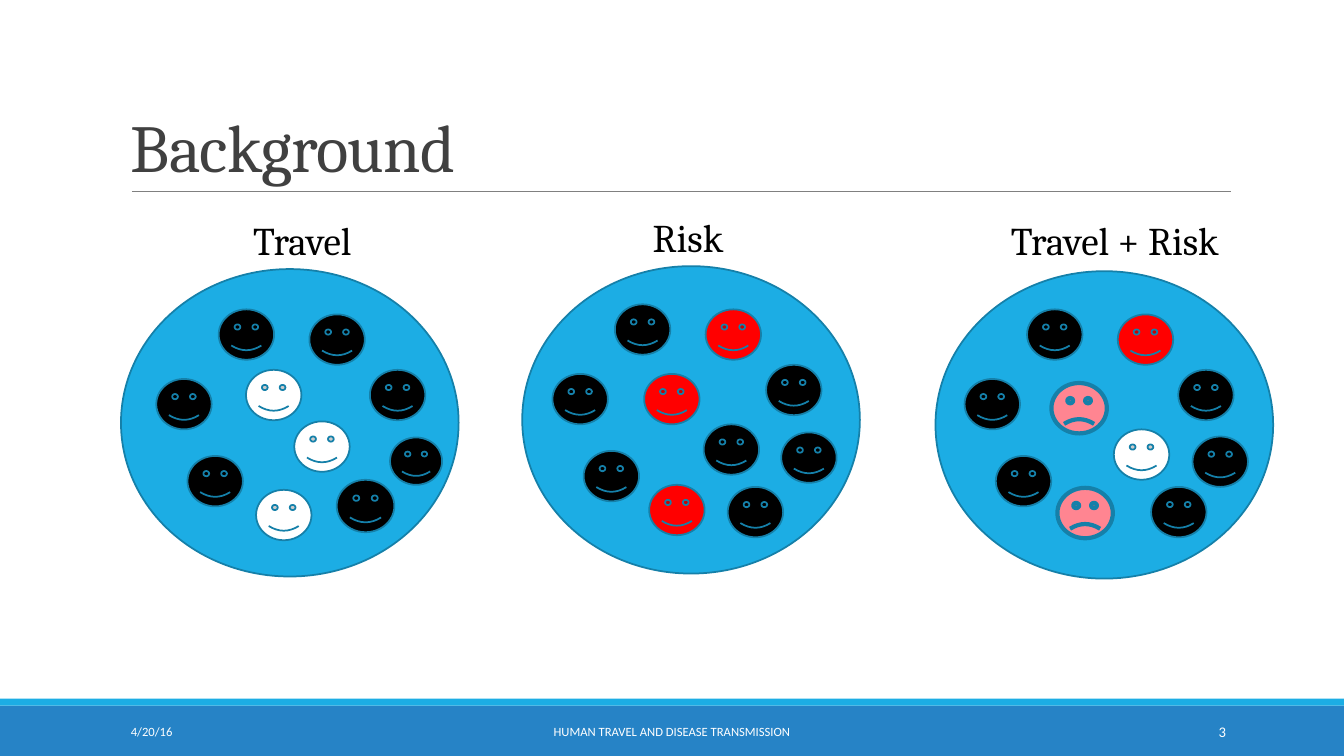
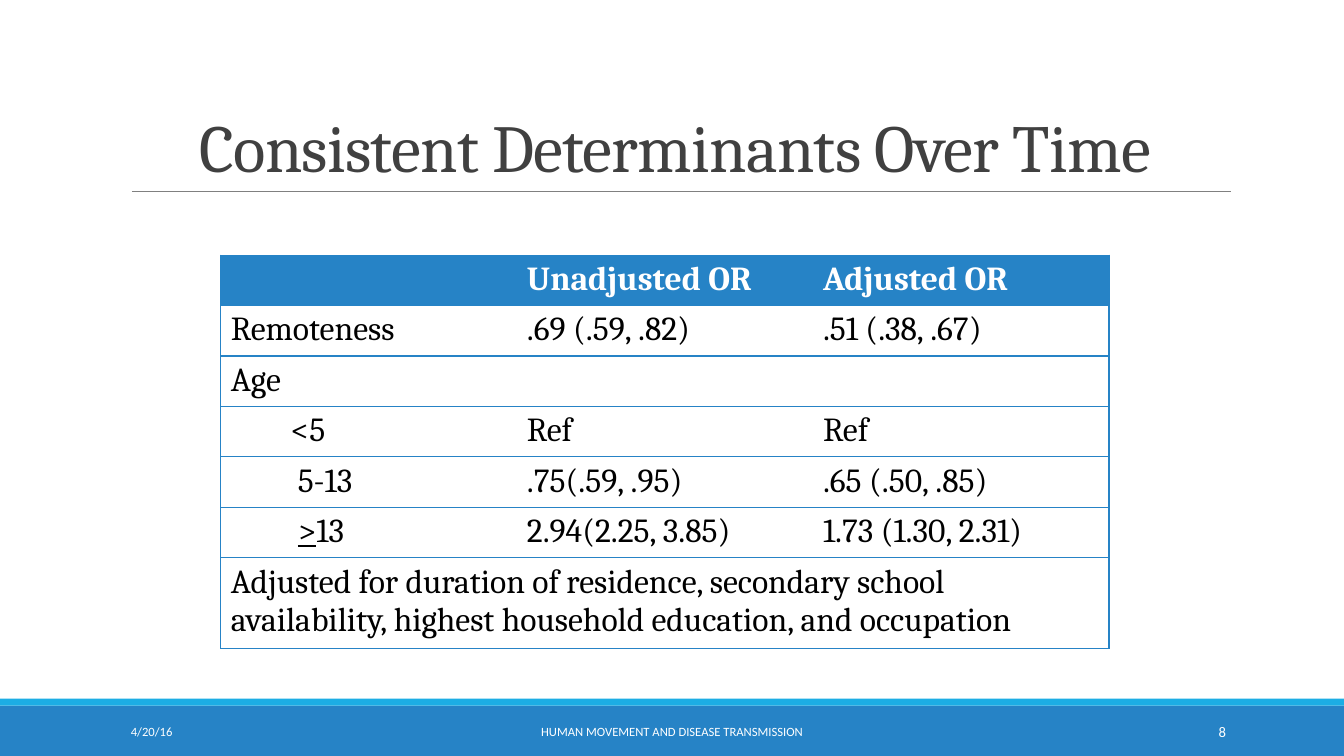
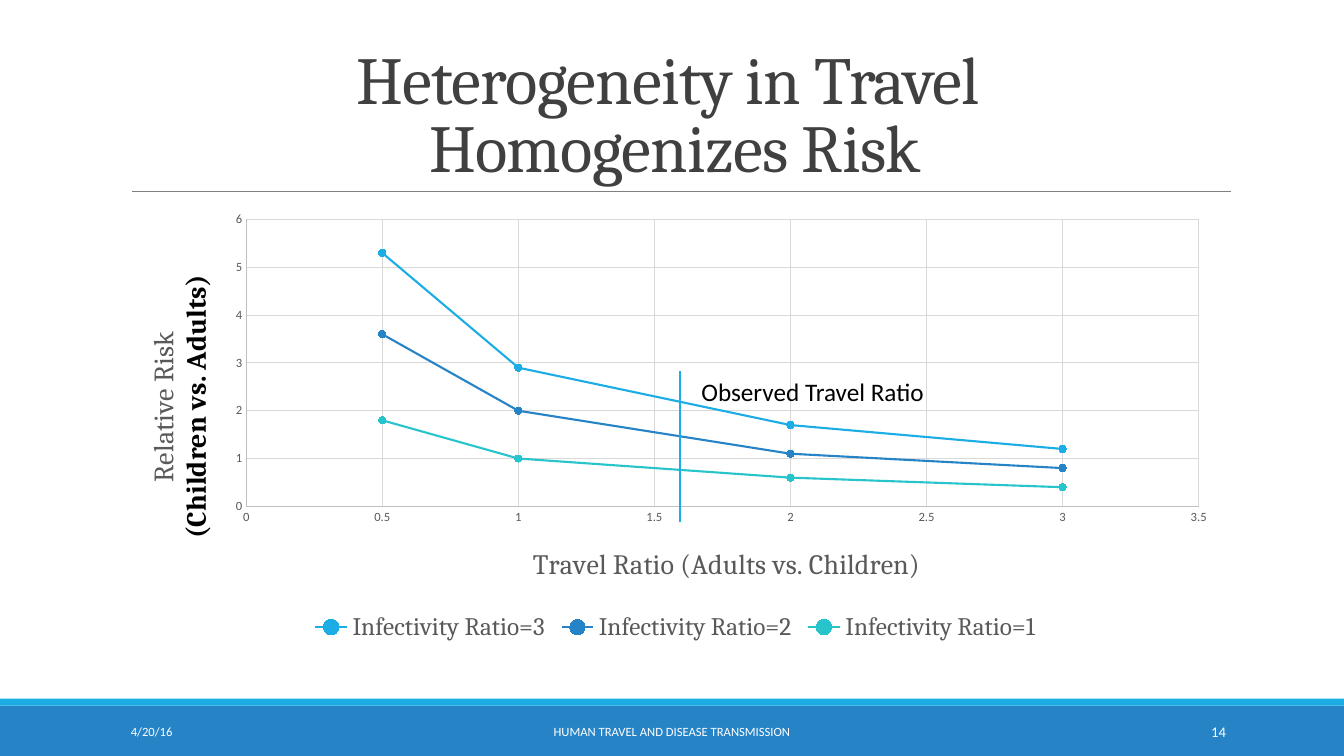
from dataclasses import dataclass

from lxml.etree import SubElement
from pptx import Presentation
from pptx.chart.data import XyChartData
from pptx.dml.color import RGBColor
from pptx.enum.chart import XL_CHART_TYPE, XL_LEGEND_POSITION, XL_MARKER_STYLE, XL_TICK_MARK
from pptx.enum.shapes import MSO_CONNECTOR, MSO_SHAPE
from pptx.enum.text import MSO_ANCHOR, PP_ALIGN
from pptx.oxml.ns import qn
from pptx.util import Pt


@dataclass(frozen=True)
class Theme:
    white: RGBColor = RGBColor(0xFF, 0xFF, 0xFF)
    black: RGBColor = RGBColor(0, 0, 0)
    red: RGBColor = RGBColor(0xFF, 0, 0)
    pink: RGBColor = RGBColor(0xFF, 0x85, 0x91)
    sky: RGBColor = RGBColor(0x1C, 0xAD, 0xE4)
    blue: RGBColor = RGBColor(0x26, 0x83, 0xC6)
    teal: RGBColor = RGBColor(0x28, 0xC4, 0xCC)
    outline: RGBColor = RGBColor(0x15, 0x80, 0xA9)
    heading: RGBColor = RGBColor(0x40, 0x40, 0x40)
    rule: RGBColor = RGBColor(0x80, 0x80, 0x80)
    chart_text: RGBColor = RGBColor(0x59, 0x59, 0x59)
    axis: RGBColor = RGBColor(0xBF, 0xBF, 0xBF)
    grid: RGBColor = RGBColor(0xD9, 0xD9, 0xD9)
    serif: str = "Cambria"
    sans: str = "Calibri"
    title_size: float = 48
    label_size: float = 28
    table_size: float = 24
    axis_title_size: float = 20
    note_size: float = 18
    number_size: float = 10.5
    small_size: float = 9


THEME = Theme()


def add_text(slide, box, text, font, size, color, align=PP_ALIGN.LEFT, anchor=MSO_ANCHOR.TOP):
    """Add a wrapped text box; box is left, top, width, height in points."""
    text_box = slide.shapes.add_textbox(*map(Pt, box))
    frame = text_box.text_frame
    frame.word_wrap = True
    frame.vertical_anchor = anchor
    frame.text = text
    paragraph = frame.paragraphs[0]
    paragraph.alignment = align
    for run in paragraph.runs:
        run.font.name, run.font.size, run.font.color.rgb = font, Pt(size), color
    return text_box


def add_filled(slide, preset, box, fill, line=None, weight=1.25):
    """Add a filled preset shape, outlined only when a line colour is given."""
    shape = slide.shapes.add_shape(preset, *map(Pt, box))
    shape.shadow.inherit = False
    shape.fill.solid()
    shape.fill.fore_color.rgb = fill
    if line is None:
        shape.line.fill.background()
    else:
        shape.line.color.rgb = line
        shape.line.width = Pt(weight)
    return shape


prs = Presentation()
prs.slide_width, prs.slide_height = Pt(960), Pt(540)

# Shared frame: bands, title, footer
travel_footer = "HUMAN TRAVEL AND DISEASE TRANSMISSION"
movement_footer = "HUMAN MOVEMENT AND DISEASE TRANSMISSION"
pages = [
    ("Background", PP_ALIGN.LEFT, travel_footer, "3"),
    ("Consistent Determinants Over Time", PP_ALIGN.CENTER, movement_footer, "8"),
    ("Heterogeneity in Travel \vHomogenizes Risk", PP_ALIGN.CENTER, travel_footer, "14"),
]
slides = []
for heading, heading_align, footer, number in pages:
    slide = prs.slides.add_slide(prs.slide_layouts[6])
    slides.append(slide)
    add_filled(slide, MSO_SHAPE.RECTANGLE, (0, 504, 960, 36), THEME.blue)
    add_filled(slide, MSO_SHAPE.RECTANGLE, (0, 499, 960, 5), THEME.sky)
    title = add_text(slide, (86.4, 22.3, 792, 114.5), heading, THEME.serif,
                     THEME.title_size, THEME.heading, heading_align, MSO_ANCHOR.BOTTOM)
    title.text_frame.paragraphs[0].line_spacing = 0.85
    for properties in title.element.iter(qn("a:rPr")):
        properties.set("spc", "-50")
    for left, width, text, size, align in [
        (86.4, 194.4, "4/20/16", THEME.small_size, PP_ALIGN.LEFT),
        (290.2, 379.4, footer, THEME.small_size, PP_ALIGN.CENTER),
        (779.8, 103, number, THEME.number_size, PP_ALIGN.RIGHT),
    ]:
        add_text(slide, (left, 508.3, width, 28.8), text, THEME.sans, size,
                 THEME.white, align, MSO_ANCHOR.MIDDLE)
background, determinants, heterogeneity = slides

# Background: three crowds sharing a ring of five faces
FACE_WIDTH, FACE_HEIGHT = 39.6, 36
ring = [(0, 0), (44.6, -49.7), (109.4, -46.1), (152.6, -6.5), (22.3, 55)]
at_risk_in_ring = 2
crowds = [
    ("Travel", (96.5, 151.2, 239, 41), (86.4, 192.2), (111.6, 270.7), THEME.black, [
        (175.7, 264.2, THEME.white, 1), (210.2, 301, THEME.white, 1),
        (182.9, 349.9, THEME.white, 1), (278.6, 312.5, THEME.black, 0.94),
        (240.5, 342.7, THEME.black, 1.04)]),
    ("Risk", (381.6, 149, 219.6, 41), (373, 190.1), (394.6, 267.1), THEME.red, [
        (460.1, 267.1, THEME.red, 1), (502.6, 303.1, THEME.black, 1),
        (463.7, 346.3, THEME.red, 1), (558, 308.9, THEME.black, 1),
        (519.8, 347.8, THEME.black, 1)]),
    ("Travel + Risk", (709.2, 151.2, 174.2, 41), (668.2, 193.7), (689, 270.7), THEME.red, [
        (751, 273.6, THEME.pink, 1), (795.6, 306.7, THEME.white, 1),
        (755.3, 348.5, THEME.pink, 1), (851.8, 311.8, THEME.black, 1),
        (822.2, 347.8, THEME.black, 1)]),
]
for label, label_box, disc, (ring_left, ring_top), risk_color, others in crowds:
    add_filled(background, MSO_SHAPE.OVAL, (*disc, 241.2, 219.6), THEME.sky, THEME.outline)
    faces = [
        (ring_left + dx, ring_top + dy, risk_color if i == at_risk_in_ring else THEME.black, 1)
        for i, (dx, dy) in enumerate(ring)
    ]
    for left, top, color, scale in faces + others:
        frowning = color == THEME.pink
        face = add_filled(background, MSO_SHAPE.SMILEY_FACE,
                          (left, top, FACE_WIDTH * scale, FACE_HEIGHT * scale),
                          color, THEME.outline, 3 if frowning else 1.25)
        if frowning:
            face.adjustments[0] = -0.047
    add_text(background, label_box, label, THEME.serif, THEME.label_size,
             THEME.black, PP_ALIGN.CENTER)

# Determinants: odds ratio table
odds_rows = [
    ("", "Unadjusted OR", "Adjusted OR"),
    ("Remoteness", ".69 (.59, .82)", ".51 (.38, .67)"),
    ("Age", "", ""),
    ("<5", "Ref", "Ref"),
    ("5-13", ".75(.59, .95)", ".65 (.50, .85)"),
    (">", "2.94(2.25, 3.85)", "1.73 (1.30, 2.31)"),
    ("Adjusted for duration of residence, secondary school availability, "
     "highest household education, and occupation", "", ""),
]
age_indents = {3: 50, 4: 55, 5: 55}
last_row, last_column = len(odds_rows) - 1, 2
odds = determinants.shapes.add_table(
    len(odds_rows), 3, Pt(157.7), Pt(182.2), Pt(634.5), Pt(271.8)).table
odds.horz_banding = False
for column in odds.columns:
    column.width = Pt(211.5)
for r, row_texts in enumerate(odds_rows):
    odds.rows[r].height = Pt(63 if r == last_row else 34.8)
    for c, text in enumerate(row_texts):
        cell = odds.cell(r, c)
        cell.text_frame.text = text
        if c == 0 and r in age_indents:
            cell.margin_left = Pt(age_indents[r])
        # Horizontal rules everywhere, vertical ones only on the outside
        edges = {"lnL": c == 0, "lnR": c == last_column or r == last_row,
                 "lnT": True, "lnB": True}
        for edge, visible in edges.items():
            border = SubElement(cell._tc.get_or_add_tcPr(), qn(f"a:{edge}"), w=str(Pt(1)))
            if visible:
                paint = SubElement(border, qn("a:solidFill"))
                SubElement(paint, qn("a:srgbClr"), val=str(THEME.blue))
            else:
                SubElement(border, qn("a:noFill"))
        if r == 0:
            cell.fill.solid()
            cell.fill.fore_color.rgb = THEME.blue
        else:
            cell.fill.background()
oldest = odds.cell(5, 0).text_frame.paragraphs[0]
oldest.runs[0].font.underline = True
oldest.add_run().text = "13"
odds.cell(last_row, 0).merge(odds.cell(last_row, last_column))
for r, row in enumerate(odds.rows):
    for cell in row.cells:
        for run in cell.text_frame.paragraphs[0].runs:
            run.font.name, run.font.size = THEME.serif, Pt(THEME.table_size)
            run.font.bold = r == 0
            run.font.color.rgb = THEME.white if r == 0 else THEME.black

# Heterogeneity: relative risk chart
travel_ratios = [0.5, 1, 2, 3]
infectivity = [
    ("Infectivity Ratio=3", [5.3, 2.9, 1.7, 1.2], THEME.sky),
    ("Infectivity Ratio=2", [3.6, 2, 1.1, 0.8], THEME.blue),
    ("Infectivity Ratio=1", [1.8, 1, 0.6, 0.4], THEME.teal),
]
risk_data = XyChartData()
for name, risks, _ in infectivity:
    points = risk_data.add_series(name)
    for ratio, risk in zip(travel_ratios, risks):
        points.add_data_point(ratio, risk)
chart = heterogeneity.shapes.add_chart(
    XL_CHART_TYPE.XY_SCATTER_LINES, Pt(86.4), Pt(145.4), Pt(792), Pt(316.8), risk_data).chart
chart.has_title = False
chart.font.name, chart.font.size = THEME.sans, Pt(10)
chart.font.color.rgb = THEME.black
chart.plots[0].vary_by_categories = False
for series, (_, _, color) in zip(chart.plots[0].series, infectivity):
    series.smooth = False
    series.format.line.color.rgb = color
    series.format.line.width = Pt(1.5)
    series.marker.style, series.marker.size = XL_MARKER_STYLE.CIRCLE, 5
    series.marker.format.fill.solid()
    series.marker.format.fill.fore_color.rgb = color
    series.marker.format.line.color.rgb = color

chart.has_legend = True
chart.legend.position = XL_LEGEND_POSITION.BOTTOM
chart.legend.include_in_layout = False
chart.legend.font.name, chart.legend.font.size = THEME.serif, Pt(THEME.note_size)
chart.legend.font.color.rgb = THEME.chart_text

# Axes
for axis, top_value, step, axis_title in [
    (chart.category_axis, 3.5, 0.5, "Travel Ratio (Adults vs. Children)"),
    (chart.value_axis, 6, 1, "Relative Risk\n(Children vs. Adults)"),
]:
    axis.minimum_scale, axis.maximum_scale, axis.major_unit = 0, top_value, step
    axis.major_tick_mark = axis.minor_tick_mark = XL_TICK_MARK.NONE
    axis.has_major_gridlines = True
    for line, color in [(axis.format.line, THEME.axis),
                        (axis.major_gridlines.format.line, THEME.grid)]:
        line.color.rgb, line.width = color, Pt(0.75)
    labels = axis.tick_labels
    labels.number_format, labels.number_format_is_linked = "General", False
    labels.font.name, labels.font.size = THEME.sans, Pt(THEME.small_size)
    labels.font.color.rgb = THEME.chart_text
    axis.axis_title.text_frame.text = axis_title
    for i, paragraph in enumerate(axis.axis_title.text_frame.paragraphs):
        font = paragraph.runs[0].font
        font.name, font.size = THEME.serif, Pt(THEME.axis_title_size)
        font.bold = i == 1
        font.color.rgb = THEME.black if i == 1 else THEME.chart_text

# Fixed places for the plot and the axis titles, as fractions of the chart
ratio_title = chart.category_axis.axis_title.element
risk_title = chart.value_axis.axis_title.element
for body in risk_title.iter(qn("a:bodyPr")):
    body.set("rot", "-5400000")
    body.set("vert", "horz")
plot_area = next(chart.element.iter(qn("c:plotArea")))
for part, index, place in [
    (plot_area, 0, {"x": 0.113, "y": 0.036, "w": 0.859, "h": 0.647}),
    (ratio_title, 1, {"x": 0.367, "y": 0.76}),
    (risk_title, 1, {"x": 0.02, "y": 0.154}),
]:
    for old_layout in part.findall(qn("c:layout")):
        part.remove(old_layout)
    layout = SubElement(part, qn("c:layout"))
    part.insert(index, layout)
    manual = SubElement(layout, qn("c:manualLayout"))
    if part is plot_area:
        SubElement(manual, qn("c:layoutTarget"), val="inner")
    for side in ("x", "y"):
        SubElement(manual, qn(f"c:{side}Mode"), val="edge")
    for side, fraction in place.items():
        SubElement(manual, qn(f"c:{side}"), val=str(fraction))

add_text(heterogeneity, (493.9, 265, 182.2, 28.8), "Observed Travel Ratio",
         THEME.sans, THEME.note_size, THEME.black)

# Title rules and the observed ratio line
title_rules = [(slide, (94.3, 136.8, 879.1, 136.8), THEME.rule, 0.5) for slide in slides]
observed_ratio = (heterogeneity, (486, 373, 486, 265), THEME.sky, 1.5)
for slide, ends, color, weight in [*title_rules, observed_ratio]:
    line = slide.shapes.add_connector(MSO_CONNECTOR.STRAIGHT, *map(Pt, ends))
    line.line.color.rgb, line.line.width = color, Pt(weight)
    SubElement(line.element.spPr, qn("a:effectLst"))

prs.save("out.pptx")
